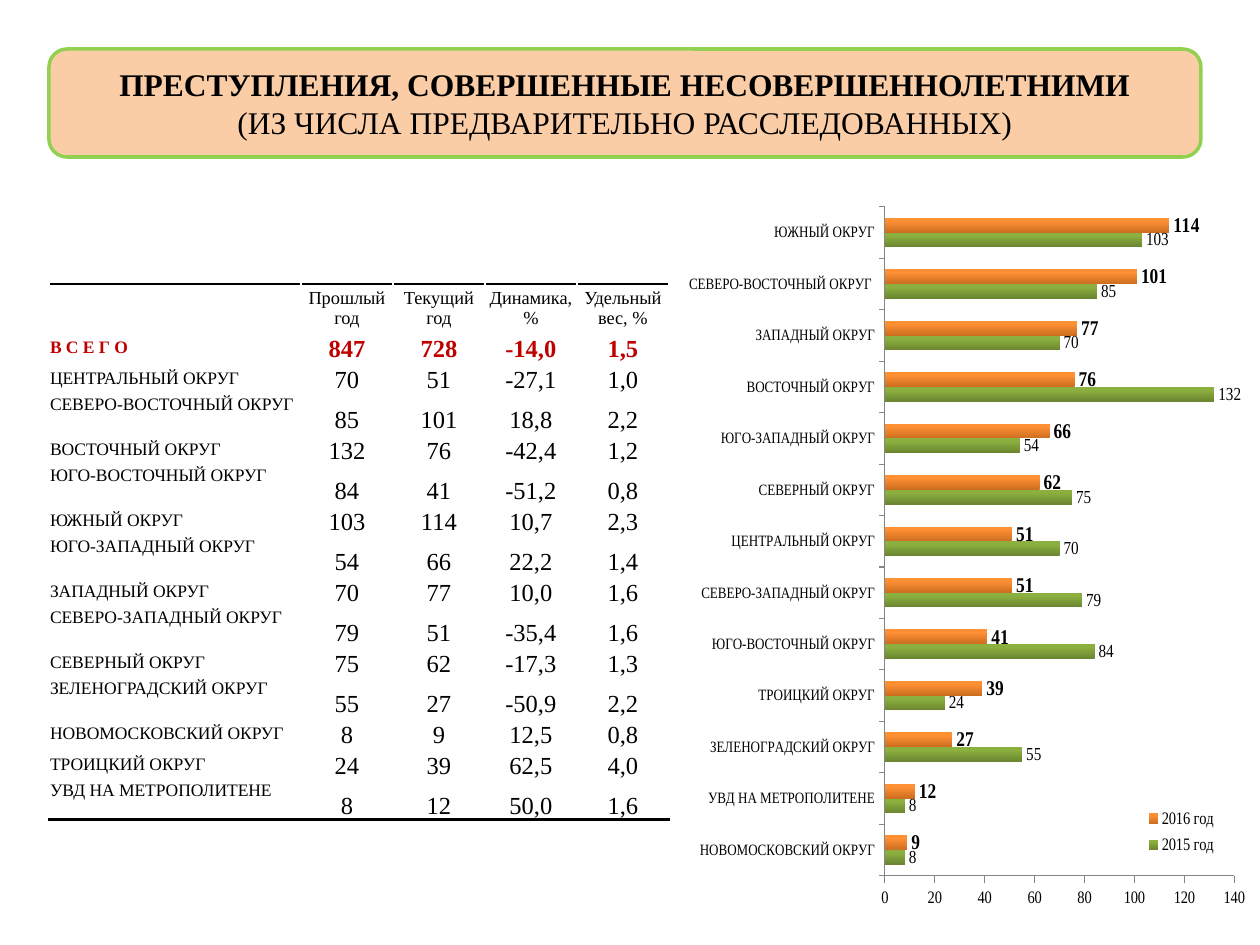
from dataclasses import dataclass

from lxml.etree import SubElement
from pptx import Presentation
from pptx.chart.data import CategoryChartData as ChartData
from pptx.dml.color import RGBColor
from pptx.enum.chart import XL_CHART_TYPE as Kind, XL_LABEL_POSITION as Spot
from pptx.enum.chart import XL_LEGEND_POSITION as Side, XL_TICK_MARK as Tick
from pptx.enum.shapes import MSO_SHAPE as Shape
from pptx.enum.text import MSO_ANCHOR as Anchor, PP_ALIGN as Align
from pptx.oxml import parse_xml
from pptx.oxml.ns import nsdecls, qn
from pptx.util import Pt

PX = 914400 // 126


@dataclass(frozen=True)
class Theme:
    font: str = "Times New Roman"
    ink: str = "000000"
    paper: str = "FFFFFF"
    red: str = "C00000"
    peach: str = "FBCDA7"
    lime: str = "92D050"
    axis: str = "868686"
    green: tuple = ("6B8530", "8BB03F")
    orange: tuple = ("CC6E20", "FF9034")
    title: float = 18
    figure: float = 14
    strong: float = 12
    head: float = 10.5
    body: float = 10
    small: float = 9


T = Theme()

HEADS = ["", "Прошлый год", "Текущий год", "Динамика, %", "Удельный вес, %"]
ROWS = [
    ("В С Е Г О", "847", "728", "-14,0", "1,5"),
    ("ЦЕНТРАЛЬНЫЙ ОКРУГ", "70", "51", "-27,1", "1,0"),
    ("СЕВЕРО-ВОСТОЧНЫЙ ОКРУГ", "85", "101", "18,8", "2,2"),
    ("ВОСТОЧНЫЙ ОКРУГ", "132", "76", "-42,4", "1,2"),
    ("ЮГО-ВОСТОЧНЫЙ ОКРУГ", "84", "41", "-51,2", "0,8"),
    ("ЮЖНЫЙ ОКРУГ", "103", "114", "10,7", "2,3"),
    ("ЮГО-ЗАПАДНЫЙ ОКРУГ", "54", "66", "22,2", "1,4"),
    ("ЗАПАДНЫЙ ОКРУГ", "70", "77", "10,0", "1,6"),
    ("СЕВЕРО-ЗАПАДНЫЙ ОКРУГ", "79", "51", "-35,4", "1,6"),
    ("СЕВЕРНЫЙ ОКРУГ", "75", "62", "-17,3", "1,3"),
    ("ЗЕЛЕНОГРАДСКИЙ ОКРУГ", "55", "27", "-50,9", "2,2"),
    ("НОВОМОСКОВСКИЙ ОКРУГ", "8", "9", "12,5", "0,8"),
    ("ТРОИЦКИЙ ОКРУГ", "24", "39", "62,5", "4,0"),
    ("УВД НА МЕТРОПОЛИТЕНЕ", "8", "12", "50,0", "1,6"),
]
TALL = {3, 5, 7, 9, 11, 14}

BARS = [
    ("НОВОМОСКОВСКИЙ ОКРУГ", 8, 9),
    ("УВД НА МЕТРОПОЛИТЕНЕ", 8, 12),
    ("ЗЕЛЕНОГРАДСКИЙ ОКРУГ", 55, 27),
    ("ТРОИЦКИЙ ОКРУГ", 24, 39),
    ("ЮГО-ВОСТОЧНЫЙ ОКРУГ", 84, 41),
    ("СЕВЕРО-ЗАПАДНЫЙ ОКРУГ", 79, 51),
    ("ЦЕНТРАЛЬНЫЙ ОКРУГ", 70, 51),
    ("СЕВЕРНЫЙ ОКРУГ", 75, 62),
    ("ЮГО-ЗАПАДНЫЙ ОКРУГ", 54, 66),
    ("ВОСТОЧНЫЙ ОКРУГ", 132, 76),
    ("ЗАПАДНЫЙ ОКРУГ", 70, 77),
    ("СЕВЕРО-ВОСТОЧНЫЙ ОКРУГ ", 85, 101),
    ("ЮЖНЫЙ ОКРУГ", 103, 114),
]


def rgb(code):
    return RGBColor.from_string(code)


def emu(box):
    return [n * PX for n in box]


def style(font, size, color=T.ink, bold=False):
    font.name, font.size, font.bold = T.font, Pt(size), bold
    font.color.rgb = rgb(color)


def write(para, text, align=Align.CENTER, **form):
    para.alignment = align
    run = para.add_run()
    run.text = text
    style(run.font, **form)


def banner(slide, box):
    card = slide.shapes.add_shape(Shape.ROUNDED_RECTANGLE, *emu(box))
    card.shadow.inherit = False
    card.fill.solid()
    card.fill.fore_color.rgb = rgb(T.peach)
    card.line.color.rgb = rgb(T.lime)
    card.line.width = Pt(2)
    frame = card.text_frame
    frame.word_wrap = True
    frame.vertical_anchor = Anchor.MIDDLE
    write(frame.paragraphs[0], "ПРЕСТУПЛЕНИЯ, СОВЕРШЕННЫЕ НЕСОВЕРШЕННОЛЕТНИМИ",
          size=T.title, bold=True)
    write(frame.add_paragraph(), "(ИЗ ЧИСЛА ПРЕДВАРИТЕЛЬНО РАССЛЕДОВАННЫХ)",
          size=T.title)


def rule(cell, tag):
    """Draw a black border on one side of a cell: lnT or lnB."""
    line = parse_xml(
        f'<a:{tag} {nsdecls("a")} w="{Pt(1.5)}"><a:solidFill>'
        f'<a:srgbClr val="{T.ink}"/></a:solidFill></a:{tag}>')
    cell._tc.get_or_add_tcPr().insert(0, line)


def fill_cell(cell, row, col, text):
    cell.margin_left = cell.margin_right = cell.margin_top = PX
    cell.margin_bottom = 0
    cell.fill.solid()
    cell.fill.fore_color.rgb = rgb(T.paper)
    cell.vertical_anchor = Anchor.BOTTOM if row and col else Anchor.MIDDLE
    if row in TALL and col == 0:
        cell.vertical_anchor = Anchor.TOP
    if row == 0:
        rule(cell, "lnT")
    elif row == len(ROWS):
        rule(cell, "lnB")
    if text:
        size = T.head if row == 0 else T.figure if col else T.body
        write(cell.text_frame.paragraphs[0], text,
              align=Align.CENTER if col else Align.LEFT, size=size,
              color=T.red if row == 1 else T.ink, bold=row == 1)


def grid(slide, box):
    table = slide.shapes.add_table(len(ROWS) + 1, len(HEADS), *emu(box)).table
    table.first_row = table.horz_banding = False
    for col, wide in zip(table.columns, [252] + [92] * 4):
        col.width = wide * PX
    for r, texts in enumerate([HEADS, *ROWS]):
        table.rows[r].height = (48 if r == 0 else 40 if r in TALL else 31) * PX
        for c, text in enumerate(texts):
            fill_cell(table.cell(r, c), r, c, text)


def place(part, x, y, w, h, inner=False):
    """Fix a chart part at fractions of the chart's size."""
    old = part.find(qn("c:layout"))
    if old is not None:
        part.remove(old)
    layout = parse_xml(f'<c:layout {nsdecls("c")}/>')
    manual = SubElement(layout, qn("c:manualLayout"))
    items = [("layoutTarget", "inner")] if inner else []
    items += [("xMode", "edge"), ("yMode", "edge"),
              ("x", x), ("y", y), ("w", w), ("h", h)]
    for tag, val in items:
        SubElement(manual, qn(f"c:{tag}")).set("val", str(val))
    part.insert(0 if inner else 1, layout)


def paint(series, tones, size, bold):
    fill = series.format.fill
    fill.gradient()
    fill.gradient_angle = 90
    for stop, tone, pos in zip(fill.gradient_stops, tones, (0, 0.8)):
        stop.color.rgb = rgb(tone)
        stop.position = pos
    series.invert_if_negative = False
    labels = series.data_labels
    labels.show_value = True
    labels.position = Spot.OUTSIDE_END
    style(labels.font, size, bold=bold)


def bars(slide, box):
    names, past, now = zip(*BARS)
    data = ChartData()
    data.categories = names
    data.add_series("2015 год", past)
    data.add_series("2016 год", now)
    chart = slide.shapes.add_chart(Kind.BAR_CLUSTERED, *emu(box), data).chart
    style(chart.font, T.body)
    chart.has_title = False
    plot = chart.plots[0]
    plot.gap_width, plot.overlap, plot.vary_by_categories = 150, 0, False
    paint(plot.series[0], T.green, T.head, False)
    paint(plot.series[1], T.orange, T.strong, True)
    for axis, size in ((chart.category_axis, T.small), (chart.value_axis, T.body)):
        axis.has_major_gridlines = False
        axis.major_tick_mark, axis.minor_tick_mark = Tick.OUTSIDE, Tick.NONE
        axis.format.line.color.rgb = rgb(T.axis)
        style(axis.tick_labels.font, size)
    value = chart.value_axis
    value.minimum_scale, value.maximum_scale, value.major_unit = 0, 140, 20
    chart.has_legend = True
    legend = chart.legend
    legend.position, legend.include_in_layout = Side.RIGHT, False
    style(legend.font, T.body)
    place(legend._element, 0.77, 0.84, 0.19, 0.08)
    area = chart._chartSpace.chart.plotArea
    place(area, 0.22, 0.03, 0.76, 0.91, inner=True)


def main():
    deck = Presentation()
    deck.slide_width, deck.slide_height = emu((1260, 945))
    slide = deck.slides.add_slide(deck.slide_layouts[6])
    bars(slide, (689, 185, 556, 735))
    grid(slide, (49, 284, 620, 536))
    banner(slide, (49, 49, 1152, 108))
    deck.save("out.pptx")


if __name__ == "__main__":
    main()
